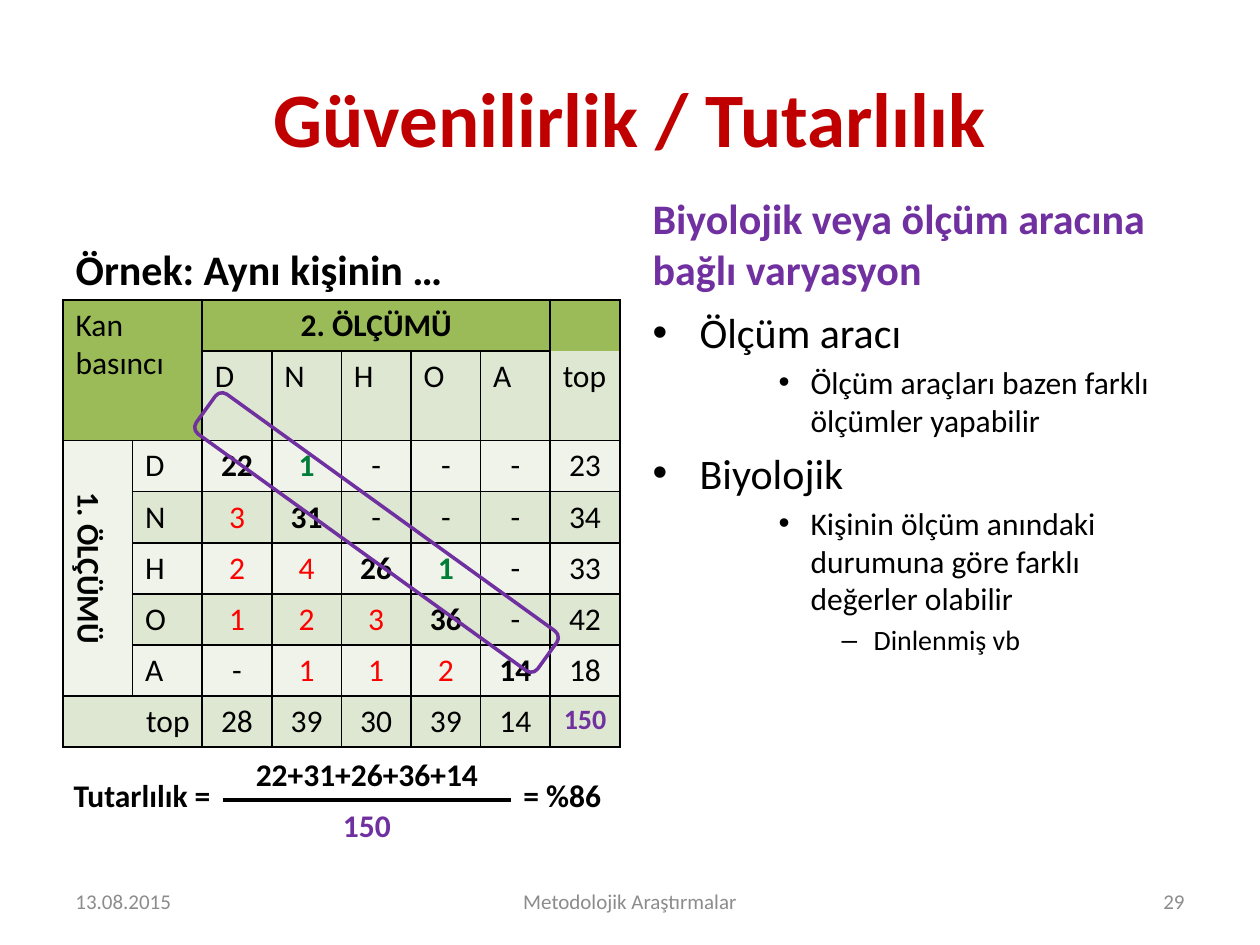
"""Build the slide on reliability and consistency of repeated measurements."""
from lxml import etree
from pptx import Presentation
from pptx import util as u
from pptx.dml.color import RGBColor
from pptx.enum import shapes, text
from pptx.oxml.ns import qn

PX = 914400 / 126
BLACK, RED, GREEN, PURPLE = "000000", "FF0000", "007E39", "7030A0"
TITLE_RED, GREY = "C00000", "8C8C8C"
HEADER, DARK_BAND, LIGHT_BAND = "9BBB59", "DEE7D1", "EFF3EA"
LEFT, CENTER, RIGHT = text.PP_ALIGN.LEFT, text.PP_ALIGN.CENTER, text.PP_ALIGN.RIGHT
MIDDLE, BOTTOM, TOP = text.MSO_ANCHOR.MIDDLE, text.MSO_ANCHOR.BOTTOM, text.MSO_ANCHOR.TOP
LEVELS = {0: ("•", 47, 47, 24), 2: ("•", 158, 32, 18), 3: ("–", 221, 32, 16)}
CLASSES = "DNHOA"
COUNTS = [
    ["22", "1", "-", "-", "-", "23"],
    ["3", "31", "-", "-", "-", "34"],
    ["2", "4", "26", "1", "-", "33"],
    ["1", "2", "3", "36", "-", "42"],
    ["-", "1", "1", "2", "14", "18"],
    ["28", "39", "30", "39", "14", "150"],
]


def emu(px):
    return u.Emu(round(px * PX))


def rgb(value):
    return RGBColor.from_string(value)


def write(paragraph, content, size=18, color=BLACK, bold=False, align=LEFT, font="Calibri"):
    paragraph.alignment = align
    run = paragraph.add_run()
    run.text = content
    run.font.name = font
    run.font.size = u.Pt(size)
    run.font.bold = bold
    run.font.color.rgb = rgb(color)


def count_format(row, column, value):
    if row == column == 5:
        return {"size": 16, "color": PURPLE, "bold": True}
    if 5 in (row, column) or value == "-":
        return {}
    if row == column:
        return {"bold": True}
    return {"color": RED} if row > column else {"color": GREEN, "bold": True}


class SlideBuilder:
    def __init__(self, presentation):
        self.slide = presentation.slides.add_slide(presentation.slide_layouts[4])
        self.placeholders = {p.placeholder_format.idx: p for p in self.slide.placeholders}

    def placeholder(self, index, box, anchor):
        shape = self.placeholders[index]
        shape.left, shape.top, shape.width, shape.height = map(emu, box)
        frame = shape.text_frame
        frame.word_wrap = True
        frame.auto_size = text.MSO_AUTO_SIZE.NONE
        frame.vertical_anchor = anchor
        frame.paragraphs[0].space_before = u.Pt(0)
        return frame

    def heading(self, index, box, content, anchor=BOTTOM, **style):
        frame = self.placeholder(index, box, anchor)
        write(frame.paragraphs[0], content, bold=True, **style)

    def bullets(self, index, box, items):
        frame = self.placeholder(index, box, TOP)
        for number, (level, content) in enumerate(items):
            paragraph = frame.add_paragraph() if number else frame.paragraphs[0]
            paragraph.level = level
            mark, margin, hanging, size = LEVELS[level]
            properties = paragraph._p.get_or_add_pPr()
            properties.set("marL", str(emu(margin)))
            properties.set("indent", str(-emu(hanging)))
            etree.SubElement(properties, qn("a:buFont"), typeface="Arial")
            etree.SubElement(properties, qn("a:buChar"), char=mark)
            write(paragraph, content, size=size)

    def remove_placeholder(self, index):
        element = self.placeholders[index]._element
        element.getparent().remove(element)

    def label(self, box, content, anchor=TOP, **style):
        frame = self.slide.shapes.add_textbox(*map(emu, box)).text_frame
        frame.word_wrap = True
        frame.vertical_anchor = anchor
        write(frame.paragraphs[0], content, **style)

    def line(self, start, end, color, width):
        connector = self.slide.shapes.add_connector(
            shapes.MSO_CONNECTOR.STRAIGHT, *map(emu, start + end))
        connector.line.color.rgb = rgb(color)
        connector.line.width = u.Pt(width)
        etree.SubElement(connector._element.spPr, qn("a:effectLst"))

    def outline(self, box, rotation, color, width):
        shape = self.slide.shapes.add_shape(
            shapes.MSO_SHAPE.ROUNDED_RECTANGLE, *map(emu, box))
        shape.rotation = rotation
        shape.shadow.inherit = False
        shape.fill.background()
        shape.line.color.rgb = rgb(color)
        shape.line.width = u.Pt(width)

    def table(self, box, rows, columns):
        table = self.slide.shapes.add_table(rows, columns, *map(emu, box)).table
        table.first_row = table.horz_banding = False
        for column in table.columns:
            column.width = emu(box[2] / columns)
        for row in table.rows:
            row.height = emu(box[3] / rows)
        return table

    def cell(self, cell, fill, content="", open_side="", **style):
        properties = cell._tc.get_or_add_tcPr()
        for side in "LRTB":
            border = etree.SubElement(properties, qn(f"a:ln{side}"), w=str(u.Pt(1)))
            if side == open_side:
                etree.SubElement(border, qn("a:noFill"))
            else:
                solid = etree.SubElement(border, qn("a:solidFill"))
                etree.SubElement(solid, qn("a:srgbClr"), val=BLACK)
        cell.fill.solid()
        cell.fill.fore_color.rgb = rgb(fill)
        if content:
            write(cell.text_frame.paragraphs[0], content, **style)


def add_agreement_table(builder):
    table = builder.table((63, 300, 557, 408), 8, 8)
    contents = {
        (0, 0): ("Kan basıncı", {}),
        (0, 2): ("2. ÖLÇÜMÜ", {"bold": True, "align": CENTER}),
        (1, 7): ("top", {"open_side": "T"}),
        (0, 7): ("", {"open_side": "B"}),
        (2, 0): ("1. ÖLÇÜMÜ", {"bold": True, "align": CENTER}),
        (7, 0): ("top", {"align": RIGHT}),
    }
    for number, name in enumerate(CLASSES, 2):
        contents[1, number] = contents[number, 1] = (name, {})
    for row, values in enumerate(COUNTS):
        for column, value in enumerate(values):
            style = count_format(row, column, value)
            contents[row + 2, column + 2] = (value, {"align": CENTER, **style})

    for first, last in [((0, 0), (1, 1)), ((0, 2), (0, 6)), ((2, 0), (6, 0)), ((7, 0), (7, 1))]:
        table.cell(*first).merge(table.cell(*last))
    for row in range(8):
        for column in range(8):
            header = row == 0 or (row == 1 and column < 2)
            band = DARK_BAND if row % 2 and column + row > 1 else LIGHT_BAND
            content, style = contents.get((row, column), ("", {}))
            builder.cell(table.cell(row, column), HEADER if header else band, content, **style)
    side_header = table.cell(2, 0)
    side_header.vertical_anchor = MIDDLE
    side_header._tc.get_or_add_tcPr().set("vert", "vert")


def main():
    presentation = Presentation()
    presentation.slide_width, presentation.slide_height = emu(1260), emu(945)
    builder = SlideBuilder(presentation)

    builder.heading(0, (63, 38, 1134, 157), "Güvenilirlik / Tutarlılık",
                    anchor=MIDDLE, size=44, color=TITLE_RED, align=CENTER)
    builder.heading(1, (63, 212, 557, 88), "Örnek: Aynı kişinin …", size=24)
    builder.remove_placeholder(2)
    add_agreement_table(builder)
    builder.heading(3, (640, 195, 557, 105), "Biyolojik veya ölçüm aracına bağlı varyasyon",
                    size=24, color=PURPLE)
    builder.bullets(4, (640, 300, 557, 544), [
        (0, "Ölçüm aracı"),
        (2, "Ölçüm araçları bazen farklı ölçümler yapabilir"),
        (0, "Biyolojik"),
        (2, "Kişinin ölçüm anındaki durumuna göre farklı değerler olabilir"),
        (3, "Dinlenmiş vb"),
    ])

    for left, width, content, align in [(63, 294, "13.08.2015", LEFT),
                                        (430, 400, "Metodolojik Araştırmalar", CENTER),
                                        (903, 294, "29", RIGHT)]:
        builder.label((left, 876, width, 50), content, anchor=MIDDLE,
                      size=12, color=GREY, align=align)

    builder.outline((166, 508, 421, 49), 35.8, PURPLE, 2)
    builder.line((223, 800), (511, 800), BLACK, 2.25)
    for left, top, width, content, color, align in [
            (25, 770, 198, "Tutarlılık =", BLACK, RIGHT),
            (223, 749, 288, "22+31+26+36+14", BLACK, CENTER),
            (223, 800, 288, "150", PURPLE, CENTER),
            (511, 770, 129, "= %86", BLACK, LEFT)]:
        builder.label((left, top, width, 51), content, color=color, bold=True, align=align)

    presentation.save("out.pptx")


if __name__ == "__main__":
    main()
